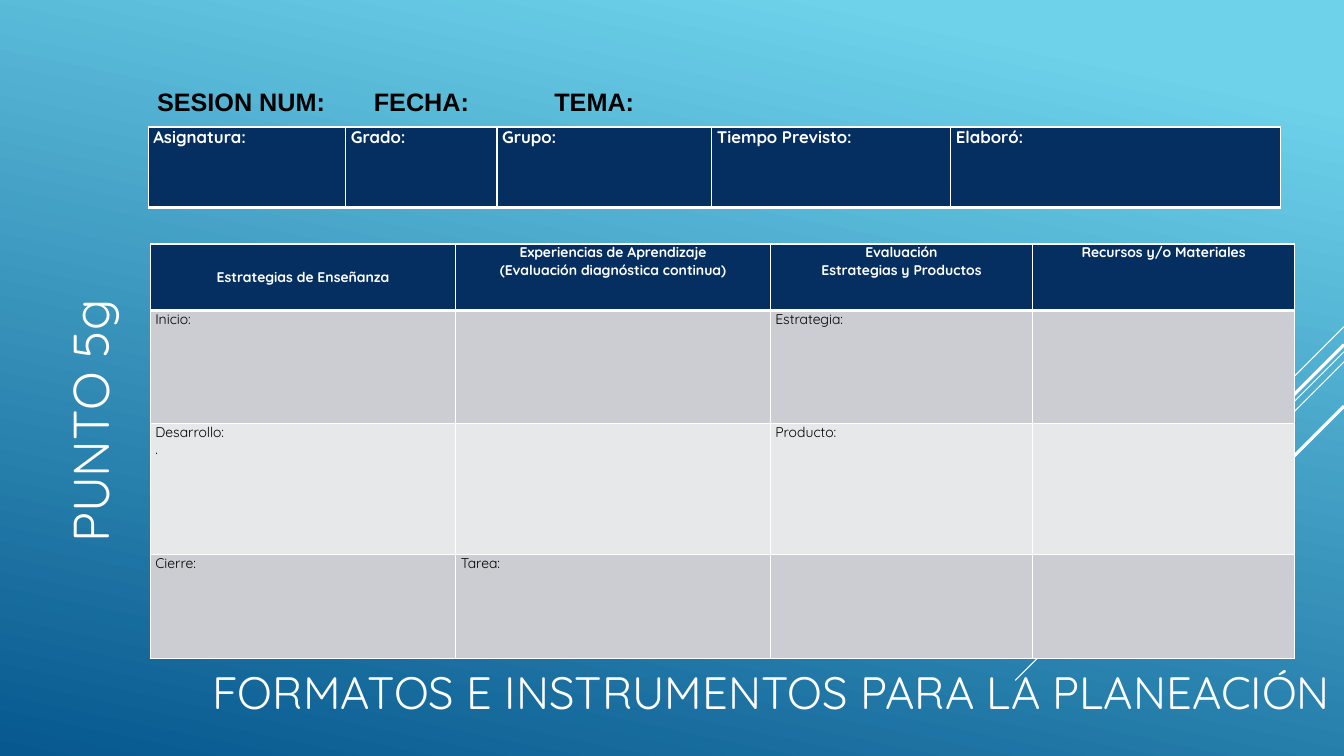
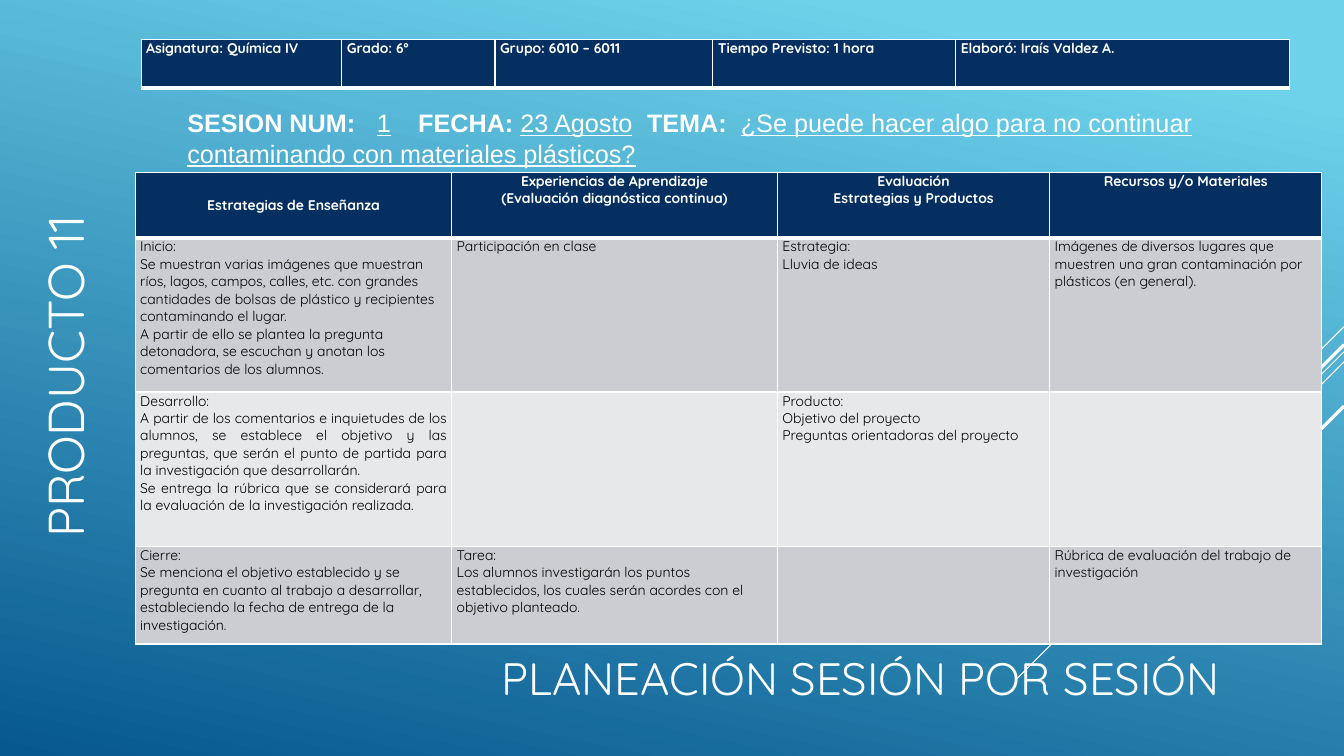
import pptx
import pptx.util
import pptx.dml.color
import pptx.enum.shapes
import pptx.enum.text
import pptx.oxml
import pptx.oxml.ns
from lxml import etree

Inches, Pt = pptx.util.Inches, pptx.util.Pt
RGBColor = pptx.dml.color.RGBColor
PP_ALIGN = pptx.enum.text.PP_ALIGN
ANCHOR = pptx.enum.text.MSO_ANCHOR
qn = pptx.oxml.ns.qn

# Shared look
WHITE = RGBColor(0xFF, 0xFF, 0xFF)
BLACK = RGBColor(0, 0, 0)
NAVY = RGBColor(0x05, 0x2F, 0x61)
GRAY = RGBColor(0xCC, 0xCD, 0xD2)
PALE = RGBColor(0xE7, 0xE8, 0xEA)
SKY = RGBColor(0x6E, 0xD2, 0xEB)
OCEAN = RGBColor(0x06, 0x58, 0x8E)
FONT, SESSION_FONT = "Quicksand", "Arial"

# Diagonals start at the right edge: (top, horizontal run, line width)
RIGHT_EDGE = 13.33
DIAGONALS = [(3.24, 1.0, 0.75), (3.49, 3.26, 0.75), (3.59, 2.07, 0.75),
             (3.42, 1.91, 2.25), (4.03, 1.39, 2.25)]

PLAN_HEADER = [
    "Estrategias de Enseñanza",
    "Experiencias de Aprendizaje\n(Evaluación diagnóstica continua)",
    "Evaluación\nEstrategias y Productos",
    "Recursos y/o Materiales",
]

# Content: boxes are left, top, width, height; session runs are (text, is_value)
SLIDES = [
    {
        "title": "FORMATOS E INSTRUMENTOS PARA LA PLANEACIÓN",
        "title_box": (2.01, 6.53, 11.32, 0.65),
        "side": "PUNTO 5g",
        "side_box": (-1.36, 2.8, 4.49, 0.88),
        "course": ["Asignatura:", "Grado:", "Grupo:", "Tiempo Previsto:", "Elaboró:"],
        "course_at": (1.47, 1.26),
        "course_columns": [1.96, 1.5, 2.13, 2.37, 3.27],
        "course_height": 0.8,
        "course_size": 12,
        "session": [("SESION NUM: ", False), ("\t", True), ("\tFECHA: ", False),
                    ("\t", True), ("TEMA:\t", False), ("\t", True)],
        "session_box": (1.46, 0.81, 11.16, 0.39),
        "session_tabs": [1.94, 2.15, 3.94, 4.86, 6.88],
        "session_color": BLACK,
        "plan": [
            ["Inicio:", "", "Estrategia:", ""],
            ["Desarrollo:\n.", "", "Producto:", ""],
            ["Cierre:", "Tarea:", "", ""],
        ],
        "plan_at": (1.49, 2.42),
        "plan_columns": [3.03, 3.12, 2.6, 2.6],
        "plan_rows": [0.66, 1.12, 1.3, 1.03],
    },
    {
        "title": "PLANEACIÓN SESIÓN POR SESIÓN",
        "title_box": (4.87, 6.42, 8.38, 0.61),
        "side": "PRODUCTO 11",
        "side_box": (-1.61, 2.75, 4.49, 0.88),
        "course": ["Asignatura: Química IV", "Grado: 6º", "Grupo: 6010 – 6011",
                   "Tiempo Previsto: 1 hora", "Elaboró: Iraís Valdez A."],
        "course_at": (1.4, 0.39),
        "course_columns": [1.99, 1.52, 2.16, 2.41, 3.31],
        "course_height": 0.48,
        "course_size": 10,
        "session": [("SESION NUM: ", False), ("\t1\t", True), ("\tFECHA: ", False),
                    ("23 Agosto\t", True), ("TEMA:\t", False),
                    ("¿Se puede hacer algo para no continuar contaminando con "
                     "materiales plásticos?", True)],
        "session_box": (1.76, 1.02, 10.94, 0.68),
        "session_tabs": [1.88, 2.09, 2.29, 4.56, 5.49],
        "session_color": WHITE,
        "plan": [
            ["Inicio:\nSe muestran varias imágenes que muestran ríos, lagos, campos, "
             "calles, etc. con grandes cantidades de bolsas de plástico y recipientes "
             "contaminando el lugar.\nA partir de ello se plantea la pregunta "
             "detonadora, se escuchan y anotan los comentarios de los alumnos.",
             "Participación en clase",
             "Estrategia:\nLluvia de ideas",
             "Imágenes de diversos lugares que muestren una gran contaminación por "
             "plásticos (en general)."],
            ["Desarrollo:\nA partir de los comentarios e inquietudes de los alumnos, se "
             "establece el objetivo y las preguntas, que serán el punto de partida para "
             "la investigación que desarrollarán.\nSe entrega la rúbrica que se "
             "considerará para la evaluación de la investigación realizada.",
             "",
             "Producto:\nObjetivo del proyecto\nPreguntas orientadoras del proyecto",
             ""],
            ["Cierre:\nSe menciona el objetivo establecido y se pregunta en cuanto al "
             "trabajo a desarrollar, estableciendo la fecha de entrega de la "
             "investigación.",
             "Tarea:\nLos alumnos investigarán los puntos establecidos, los cuales "
             "serán acordes con el objetivo planteado.",
             "",
             "Rúbrica de evaluación del trabajo de investigación"],
        ],
        "plan_at": (1.34, 1.71),
        "plan_columns": [3.14, 3.23, 2.7, 2.7],
        "plan_rows": [0.65, 1.53, 1.53, 0.97],
    },
]


def set_font(font, size, color, bold=False, name=FONT):
    font.name, font.size, font.bold = name, Pt(size), bold
    font.color.rgb = color


def set_background(master):
    fill = master.background.fill
    fill.gradient()
    fill.gradient_angle = 258
    for stop, position, color in zip(fill.gradient_stops, (0.1, 1), (SKY, OCEAN)):
        stop.position = position
        stop.color.rgb = color


def add_diagonals(slide):
    for top, run, width in DIAGONALS:
        line = slide.shapes.add_connector(
            pptx.enum.shapes.MSO_CONNECTOR.STRAIGHT,
            Inches(RIGHT_EDGE), Inches(top), Inches(RIGHT_EDGE - run), Inches(top + run))
        line.line.color.rgb = WHITE
        line.line.width = Pt(width)
        etree.SubElement(line._element.spPr, qn("a:effectLst"))


def set_heading(shape, text, box, size):
    shape.left, shape.top, shape.width, shape.height = map(Inches, box)
    frame = shape.text_frame
    frame.text = text
    frame.word_wrap = True
    frame.auto_size = pptx.enum.text.MSO_AUTO_SIZE.NONE
    frame.vertical_anchor = ANCHOR.MIDDLE
    paragraph = frame.paragraphs[0]
    paragraph.alignment = PP_ALIGN.LEFT
    set_font(paragraph.font, size, WHITE)


def set_borders(cell, bottom):
    properties = cell._tc.get_or_add_tcPr()
    widths = {"lnL": 1, "lnR": 1, "lnT": 1, "lnB": bottom}
    for position, (side, width) in enumerate(widths.items()):
        border = etree.Element(qn("a:" + side), w=str(Pt(width)))
        fill = etree.SubElement(border, qn("a:solidFill"))
        etree.SubElement(fill, qn("a:srgbClr"), val=str(WHITE))
        properties.insert(position, border)


def fill_cell(cell, text, fill, size, color, bold, bottom, alignments):
    """The last alignment applies to all remaining paragraphs."""
    cell.fill.solid()
    cell.fill.fore_color.rgb = fill
    set_borders(cell, bottom)
    cell.margin_left = cell.margin_right = Inches(0.05)
    cell.margin_top = cell.margin_bottom = 0
    cell.text = text
    for index, paragraph in enumerate(cell.text_frame.paragraphs):
        paragraph.alignment = alignments[min(index, len(alignments) - 1)]
        set_font(paragraph.font, size, color, bold)


def add_grid(slide, at, columns, rows):
    table = slide.shapes.add_table(
        len(rows), len(columns), Inches(at[0]), Inches(at[1]),
        Inches(sum(columns)), Inches(sum(rows))).table
    for column, width in zip(table.columns, columns):
        column.width = Inches(width)
    for row, height in zip(table.rows, rows):
        row.height = Inches(height)
    return table


def add_course_table(slide, content):
    table = add_grid(slide, content["course_at"], content["course_columns"],
                     [content["course_height"]])
    for index, text in enumerate(content["course"]):
        fill_cell(table.cell(0, index), text, NAVY, content["course_size"],
                  WHITE, True, 3, [PP_ALIGN.LEFT])


def add_plan_table(slide, content):
    table = add_grid(slide, content["plan_at"], content["plan_columns"],
                     content["plan_rows"])
    for index, text in enumerate(PLAN_HEADER):
        fill_cell(table.cell(0, index), text, NAVY, 10, WHITE, True, 3,
                  [PP_ALIGN.CENTER])
    table.cell(0, 0).vertical_anchor = ANCHOR.MIDDLE
    for row, texts in enumerate(content["plan"], 1):
        fill = GRAY if row % 2 else PALE
        for column, text in enumerate(texts):
            rest = PP_ALIGN.JUSTIFY if (row, column) == (2, 0) else PP_ALIGN.LEFT
            fill_cell(table.cell(row, column), text, fill, 10, BLACK, False, 1,
                      [PP_ALIGN.LEFT, rest])


def add_session_line(slide, content):
    frame = slide.shapes.add_textbox(*map(Inches, content["session_box"])).text_frame
    frame.word_wrap = True
    paragraph = frame.paragraphs[0]
    for text, is_value in content["session"]:
        run = paragraph.add_run()
        run.text = text
        set_font(run.font, 18, content["session_color"], not is_value, SESSION_FONT)
        run.font.underline = is_value
    # Tab stops give the blanks their width
    tabs = etree.SubElement(paragraph._p.get_or_add_pPr(), qn("a:tabLst"))
    for position in content["session_tabs"]:
        etree.SubElement(tabs, qn("a:tab"), pos=str(Inches(position)), algn="l")


def main():
    presentation = pptx.Presentation()
    presentation.slide_width, presentation.slide_height = Inches(13.33), Inches(7.5)
    set_background(presentation.slide_master)
    for content in SLIDES:
        slide = presentation.slides.add_slide(presentation.slide_layouts[5])
        add_diagonals(slide)
        set_heading(slide.shapes.title, content["title"], content["title_box"], 32.4)
        side = slide.shapes.add_textbox(0, 0, 0, 0)
        set_heading(side, content["side"], content["side_box"], 36)
        side.rotation = 270
        add_course_table(slide, content)
        add_plan_table(slide, content)
        add_session_line(slide, content)
    presentation.save("out.pptx")


if __name__ == "__main__":
    main()
